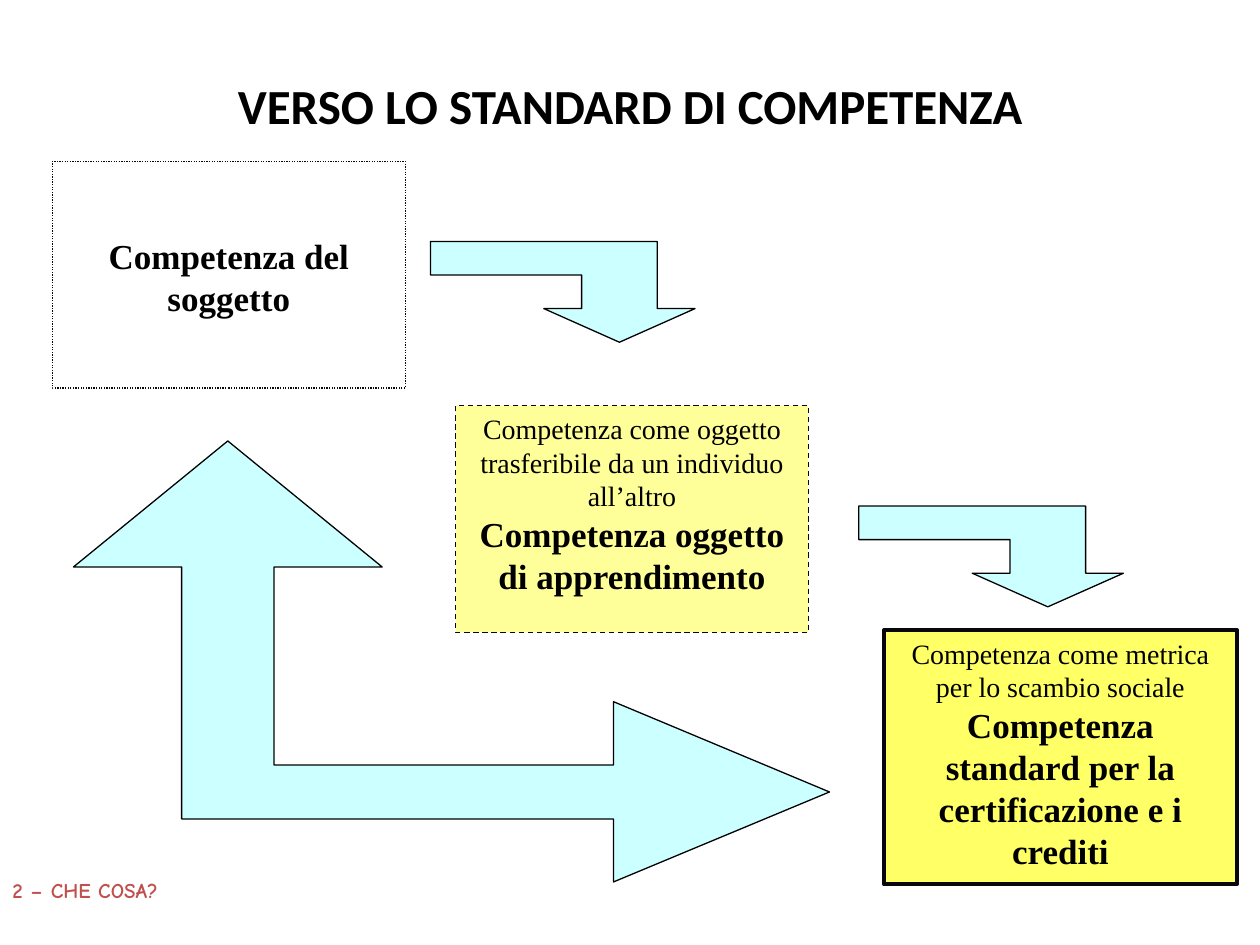
from pptx import Presentation
from pptx import util as u
from pptx.dml.color import RGBColor
from pptx.enum import dml, shapes, text

Pt = u.Pt
DASH = dml.MSO_LINE
MID = text.MSO_ANCHOR.MIDDLE
TOP = text.MSO_ANCHOR.TOP
LEFT = text.PP_ALIGN.LEFT
CENTER = text.PP_ALIGN.CENTER


class Theme:
    ink, edge, red = "000000", "08080C", "C0504D"
    white, pale, gold, aqua = "FFFFFF", "FFFF99", "FFFF66", "CCFFFF"
    head, body, hand = "Calibri", "Times New Roman", "Comic Neue"
    title, large, small, foot = 28, 20, 16, 12
    thin, thick = 0.75, 2.25


class Deck:
    def __init__(self, theme):
        self.theme = theme
        self.prs = Presentation()
        self.prs.slide_width, self.prs.slide_height = Pt(720), Pt(540)
        self.slide = self.prs.slides.add_slide(self.prs.slide_layouts[6])

    def paint(self, shape, fill, width, dash=None, line=None):
        shape.shadow.inherit = False
        shape.fill.solid()
        shape.fill.fore_color.rgb = RGBColor.from_string(fill)
        shape.line.color.rgb = RGBColor.from_string(line or self.theme.ink)
        shape.line.width = Pt(width)
        if dash:
            shape.line.dash_style = dash

    def prose(self, shape, paras, font, color, align=CENTER, anchor=TOP, top=3.6):
        frame = shape.text_frame
        form = {"word_wrap": True, "vertical_anchor": anchor,
                "margin_top": Pt(top), "margin_bottom": Pt(3.6)}
        for name, value in form.items():
            setattr(frame, name, value)
        for i, (words, size, bold) in enumerate(paras):
            para = frame.add_paragraph() if i else frame.paragraphs[0]
            para.alignment = align
            run = para.add_run()
            run.text = words
            style = {"name": font, "size": Pt(size), "bold": bold}
            for name, value in style.items():
                setattr(run.font, name, value)
            run.font.color.rgb = RGBColor.from_string(color)

    def label(self, area, words, size, font, color, **form):
        shape = self.slide.shapes.add_textbox(*map(Pt, area))
        self.prose(shape, [(words, size, True)], font, color, **form)

    def box(self, area, paras, fill, width, dash=None, top=3.6):
        shape = self.slide.shapes.add_shape(
            shapes.MSO_SHAPE.RECTANGLE, *map(Pt, area))
        self.paint(shape, fill, width, dash, self.theme.edge)
        self.prose(shape, paras, self.theme.body, self.theme.ink, top=top)

    def arrow(self, left, top, points):
        spots = [(Pt(left + x), Pt(top + y)) for x, y in points]
        form = self.slide.shapes.build_freeform(*spots[0])
        form.add_line_segments(spots[1:], close=True)
        self.paint(form.convert_to_shape(), self.theme.aqua, self.theme.thin)


def main():
    t = Theme()
    deck = Deck(t)

    # Title and section label
    deck.label((60, 42, 600, 36), "VERSO LO STANDARD DI COMPETENZA",
               t.title, t.head, t.ink, anchor=MID)
    deck.label((0, 498, 234, 21.6), "2 – CHE COSA?",
               t.foot, t.hand, t.red, align=LEFT)

    # Three stages of competence
    wide, high = 201.6, 129.6
    deck.box((30, 92.2, wide, high),
             [("Competenza del soggetto", t.large, True)],
             t.white, t.thin, DASH.ROUND_DOT, top=42)
    deck.box((260.4, 231.8, wide, high),
             [("Competenza come oggetto trasferibile da un individuo all’altro",
               t.small, False),
              ("Competenza oggetto di apprendimento", t.large, True)],
             t.pale, t.thin, DASH.DASH)
    deck.box((505.2, 360, wide, 145.4),
             [("Competenza come metrica per lo scambio sociale", t.small, False),
              ("Competenza standard per la certificazione e i crediti",
               t.large, True)],
             t.gold, t.thick)

    # Bent arrows leading to the next stage
    a, b = 21.6, 19.2
    bend = [(5 * a, 3 * b), (3 * a, 2 * b), (4 * a, 2 * b), (4 * a, b),
            (0, b), (0, 0), (6 * a, 0), (6 * a, 2 * b), (7 * a, 2 * b)]
    for left, top in ((246, 138), (490.8, 289.2)):
        deck.arrow(left, top, bend)

    # Two-headed arrow linking first and last stage
    deck.arrow(42, 252, [
        (88.2, 0), (176.4, 72), (114.6, 72), (114.6, 185.2), (308.6, 185.2),
        (308.6, 149), (432, 200.6), (308.6, 252), (308.6, 216),
        (61.8, 216), (61.8, 72), (0, 72)])

    deck.prs.save("out.pptx")


if __name__ == "__main__":
    main()
